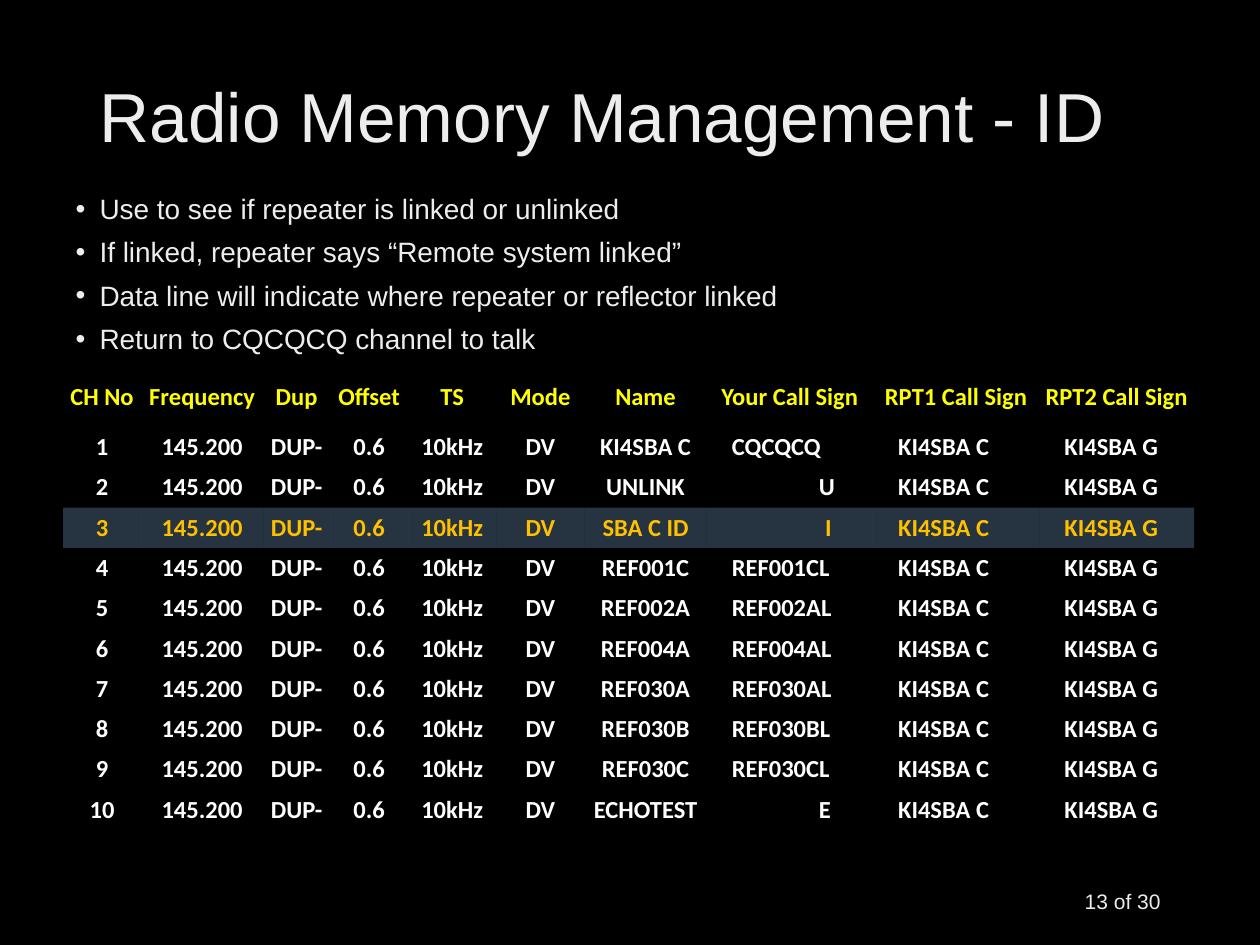
from dataclasses import dataclass

from lxml import etree
from pptx import Presentation, util as u
from pptx.dml.color import RGBColor
from pptx.enum import text
from pptx.oxml.ns import qn


@dataclass(frozen=True)
class Theme:
    background: str = "000000"
    soft_white: str = "EDEDED"
    header: str = "FFFF00"
    cell: str = "FFFFFF"
    active: str = "FFC000"
    band: str = "99CCFF"
    band_opacity: int = 25
    text_font: str = "Arial"
    table_font: str = "Calibri"
    title_size: float = 39.6
    list_size: float = 16
    table_size: float = 14
    footer_size: float = 12


@dataclass(frozen=True)
class Channel:
    name: str
    your_call: str
    call_inset: float = 0.2


THEME = Theme()
NO_GRID_STYLE = "{2D5ABB26-0587-4C30-8999-92F81FD0307C}"
ACTIVE_ROW = 3
CENTERED_COLUMNS = 7
YOUR_CALL_COLUMN = 7

BULLETS = [
    "Use to see if repeater is linked or unlinked",
    "If linked, repeater says “Remote system linked”",
    "Data line will indicate where repeater or reflector linked",
    "Return to CQCQCQ channel to talk",
]
HEADERS = ["CH No", "Frequency", "Dup", "Offset", "TS", "Mode", "Name",
           "Your Call Sign", "RPT1 Call Sign", "RPT2 Call Sign"]
COLUMN_WIDTHS = [0.62, 0.97, 0.53, 0.62, 0.7, 0.7, 0.97, 1.32, 1.32, 1.23]
REFLECTORS = ["REF001C", "REF002A", "REF004A", "REF030A", "REF030B", "REF030C"]

# Table rows
CHANNELS = [
    Channel("KI4SBA C", "CQCQCQ"),
    Channel("UNLINK", "U", 0.89),
    Channel("SBA C ID", "I", 0.94),
    *(Channel(reflector, reflector + "L") for reflector in REFLECTORS),
    Channel("ECHOTEST", "E", 0.89),
]


def style_para(para, font: str, size: float, color: str, bold: bool = False) -> None:
    for target in (para, *para.runs):
        target.font.name = font
        target.font.size = u.Pt(size)
        target.font.bold = bold
        target.font.color.rgb = RGBColor.from_string(color)


def place(box, left: float, top: float, width: float, height: float) -> None:
    box.left, box.top = u.Inches(left), u.Inches(top)
    box.width, box.height = u.Inches(width), u.Inches(height)
    box.text_frame.word_wrap = True
    box.text_frame.auto_size = text.MSO_AUTO_SIZE.NONE


def add_bullet(para) -> None:
    properties = para._p.get_or_add_pPr()
    properties.set("marL", str(u.Inches(0.19)))
    properties.set("indent", str(-u.Inches(0.19)))
    etree.SubElement(properties, qn("a:buFont")).set("typeface", THEME.text_font)
    etree.SubElement(properties, qn("a:buChar")).set("char", "•")


def write_title(box) -> None:
    place(box, 0.69, 0.4, 8.62, 1.1)
    box.text_frame.text = "Radio Memory Management - ID"
    box.text_frame.vertical_anchor = text.MSO_ANCHOR.MIDDLE
    para = box.text_frame.paragraphs[0]
    para.alignment = text.PP_ALIGN.LEFT
    para.line_spacing = 0.9
    style_para(para, THEME.text_font, THEME.title_size, THEME.soft_white)


def write_list(box) -> None:
    place(box, 0.5, 1.5, 9, 1.33)
    box.text_frame.text = "\n".join(BULLETS)
    for index, para in enumerate(box.text_frame.paragraphs):
        para.line_spacing = 0.9
        para.space_before = u.Pt(7.5 if index else 0)
        add_bullet(para)
        style_para(para, THEME.text_font, THEME.list_size, THEME.soft_white)


def fill_cell(cell, highlighted: bool) -> None:
    if not highlighted:
        cell.fill.background()
        return
    cell.fill.solid()
    cell.fill.fore_color.rgb = RGBColor.from_string(THEME.band)
    color = cell._tc.tcPr.find(".//" + qn("a:srgbClr"))
    etree.SubElement(color, qn("a:alpha")).set("val", str(THEME.band_opacity * 1000))


def write_cell(cell, words: str, color: str, inset: float, centered: bool) -> None:
    cell.text_frame.text = words
    cell.vertical_anchor = text.MSO_ANCHOR.MIDDLE
    cell.margin_left = u.Inches(inset)
    cell.margin_right = cell.margin_top = cell.margin_bottom = 0
    para = cell.text_frame.paragraphs[0]
    para.alignment = text.PP_ALIGN.CENTER if centered else text.PP_ALIGN.LEFT
    style_para(para, THEME.table_font, THEME.table_size, color, bold=True)


def add_channel_table(page) -> None:
    frame = page.shapes.add_table(
        len(CHANNELS) + 1, len(HEADERS), u.Inches(0.5), u.Inches(2.92),
        u.Inches(sum(COLUMN_WIDTHS)), u.Inches(3.67))
    table = frame.table
    table.first_row = table.horz_banding = False
    frame._element.find(".//" + qn("a:tableStyleId")).text = NO_GRID_STYLE
    for column, width in zip(table.columns, COLUMN_WIDTHS):
        column.width = u.Inches(width)
    for number, row in enumerate(table.rows):
        row.height = u.Inches(0.32 if number else 0.47)

    # Header row
    for column, header in enumerate(HEADERS):
        cell = table.cell(0, column)
        write_cell(cell, header, THEME.header, 0, True)
        fill_cell(cell, False)

    # Channel rows
    for number, channel in enumerate(CHANNELS, start=1):
        active = number == ACTIVE_ROW
        values = [str(number), "145.200", "DUP-", "0.6", "10kHz", "DV",
                  channel.name, channel.your_call, "KI4SBA C", "KI4SBA G"]
        for column, value in enumerate(values):
            centered = column < CENTERED_COLUMNS
            inset = 0 if centered else 0.2
            if column == YOUR_CALL_COLUMN:
                inset = channel.call_inset
            cell = table.cell(number, column)
            write_cell(cell, value, THEME.active if active else THEME.cell, inset, centered)
            fill_cell(cell, active)


def add_page_number(page) -> None:
    box = page.shapes.add_textbox(0, 0, 0, 0)
    place(box, 7.06, 6.95, 2.25, 0.4)
    box.text_frame.text = "13 of 30"
    box.text_frame.vertical_anchor = text.MSO_ANCHOR.MIDDLE
    para = box.text_frame.paragraphs[0]
    para.alignment = text.PP_ALIGN.RIGHT
    style_para(para, THEME.text_font, THEME.footer_size, THEME.soft_white)


def main() -> None:
    deck = Presentation()
    deck.slide_width, deck.slide_height = u.Inches(10), u.Inches(7.5)
    page = deck.slides.add_slide(deck.slide_layouts[1])
    page.background.fill.solid()
    page.background.fill.fore_color.rgb = RGBColor.from_string(THEME.background)
    write_title(page.shapes.title)
    write_list(page.placeholders[1])
    add_channel_table(page)
    add_page_number(page)
    deck.save("out.pptx")


if __name__ == "__main__":
    main()
